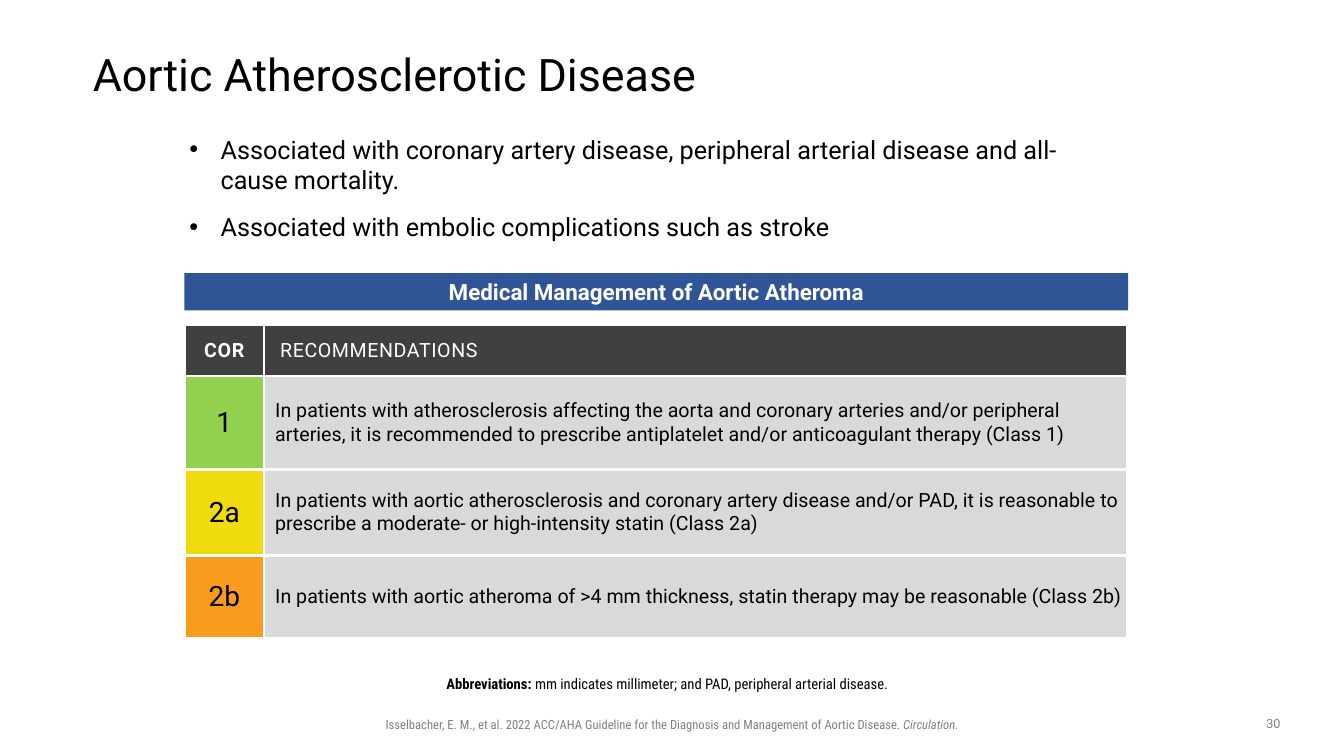
from lxml import etree
from pptx import Presentation
from pptx import util as u
from pptx.dml.color import RGBColor
from pptx.enum import shapes, text
from pptx.oxml.ns import qn

PX = 9144
BLACK = RGBColor(0x00, 0x00, 0x00)
WHITE = RGBColor(0xFF, 0xFF, 0xFF)
GRAY = RGBColor(0x80, 0x80, 0x80)
BLUE = RGBColor(0x2F, 0x55, 0x97)
CHARCOAL = RGBColor(0x40, 0x40, 0x40)
LIGHT = RGBColor(0xD9, 0xD9, 0xD9)
GREEN = RGBColor(0x92, 0xD0, 0x50)
YELLOW = RGBColor(0xF0, 0xDB, 0x0E)
ORANGE = RGBColor(0xF9, 0x9B, 0x1D)
CENTER = text.PP_ALIGN.CENTER
LEFT = text.PP_ALIGN.LEFT


def format_para(para, size, color, align=LEFT, bold=False, name="Roboto"):
    para.alignment = align
    for span in para.runs:
        span.font.name = name
        span.font.size = u.Pt(size)
        span.font.bold = bold
        span.font.color.rgb = color


def add_box(left, top, width, height):
    box = page.shapes.add_textbox(left * PX, top * PX, width * PX, height * PX)
    box.text_frame.word_wrap = True
    return box.text_frame


deck = Presentation()
deck.slide_width = 1333 * PX
deck.slide_height = 750 * PX
page = deck.slides.add_slide(deck.slide_layouts[5])

title = page.shapes.title
title.left, title.top, title.width, title.height = 92 * PX, 40 * PX, 1150 * PX, 72 * PX
frame = title.text_frame
frame.text = "Aortic Atherosclerotic Disease"
frame.auto_size = text.MSO_AUTO_SIZE.NONE
frame.vertical_anchor = text.MSO_ANCHOR.MIDDLE
frame.margin_left = frame.margin_right = frame.margin_top = frame.margin_bottom = 0
frame.paragraphs[0].line_spacing = 0.9
format_para(frame.paragraphs[0], 32, BLACK)

frame = add_box(178, 128, 897, 118)
frame.text = (
    "Associated with coronary artery disease, peripheral arterial disease and all-cause mortality.\n"
    "Associated with embolic complications such as stroke"
)
for para in frame.paragraphs:
    para.space_after = u.Pt(12)
    props = para._p.get_or_add_pPr()
    props.set("marL", str(31 * PX))
    props.set("indent", str(-31 * PX))
    etree.SubElement(props, qn("a:buFont"), typeface="Arial")
    etree.SubElement(props, qn("a:buChar"), char="•")
    format_para(para, 18, BLACK)

banner = page.shapes.add_shape(
    shapes.MSO_SHAPE.RECTANGLE, 183 * PX, 271 * PX, 936 * PX, 37 * PX)
banner.shadow.inherit = False
banner.fill.solid()
banner.fill.fore_color.rgb = BLUE
banner.line.fill.background()
banner.text_frame.text = "Medical Management of Aortic Atheroma"
format_para(banner.text_frame.paragraphs[0], 16, WHITE, CENTER, True)

rows = [
    ("COR", "RECOMMENDATIONS", CHARCOAL, 51),
    ("1", "In patients with atherosclerosis affecting the aorta and coronary arteries and/or peripheral "
     "arteries, it is recommended to prescribe antiplatelet and/or anticoagulant therapy (Class 1)", GREEN, 93),
    ("2a", "In patients with aortic atherosclerosis and coronary artery disease and/or PAD, it is reasonable "
     "to prescribe a moderate- or high-intensity statin (Class 2a)", YELLOW, 85),
    ("2b", "In patients with aortic atheroma of >4 mm thickness, statin therapy may be reasonable "
     "(Class 2b)", ORANGE, 82),
]
table = page.shapes.add_table(4, 2, 183 * PX, 322 * PX, 935 * PX, 311 * PX).table
table.first_row = table.horz_banding = False
table.columns[0].width = 79 * PX
table.columns[1].width = 856 * PX
for row, (grade, advice, color, height) in enumerate(rows):
    table.rows[row].height = height * PX
    header = row == 0
    for column, wording in enumerate((grade, advice)):
        cell = table.cell(row, column)
        cell.text = wording
        cell.vertical_anchor = text.MSO_ANCHOR.MIDDLE
        cell.margin_left = cell.margin_right = (10 if header else 5) * PX
        cell.margin_top = cell.margin_bottom = 5 * PX
        para = cell.text_frame.paragraphs[0]
        is_grade = column == 0
        if not is_grade:
            para._p.get_or_add_pPr().set("marL", str(6 * PX))
        format_para(para, 20 if is_grade and not header else 14, WHITE if header else BLACK,
                    CENTER if is_grade else LEFT, header and is_grade)
        if header:
            para.runs[0]._r.get_or_add_rPr().set("spc", "50" if is_grade else "40")
        for side in ("a:lnL", "a:lnR", "a:lnT", "a:lnB"):
            border = etree.SubElement(cell._tc.get_or_add_tcPr(), qn(side), w=str(u.Pt(2.25)))
            paint = etree.SubElement(border, qn("a:solidFill"))
            etree.SubElement(paint, qn("a:srgbClr"), val=str(WHITE))
        cell.fill.solid()
        cell.fill.fore_color.rgb = color if header or is_grade else LIGHT

frame = add_box(92, 667, 1150, 30)
frame.margin_left = 0
para = frame.paragraphs[0]
para.line_spacing = 0.9
for wording in ("Abbreviations: ", "mm indicates millimeter; and PAD, peripheral arterial disease."):
    para.add_run().text = wording
format_para(para, 10.5, BLACK, CENTER, name="Roboto Condensed")
para.runs[0].font.bold = True

para = add_box(181, 706, 971, 25).paragraphs[0]
for wording in ("Isselbacher, E. M., et al. 2022 ACC/AHA Guideline for the Diagnosis and Management of Aortic Disease. ",
                "Circulation."):
    para.add_run().text = wording
format_para(para, 9, GRAY, CENTER, name="Roboto Condensed")
para.runs[1].font.italic = True

frame = add_box(1242, 705, 42, 26)
frame.text = "30"
format_para(frame.paragraphs[0], 9, GRAY, CENTER)

deck.save("out.pptx")
